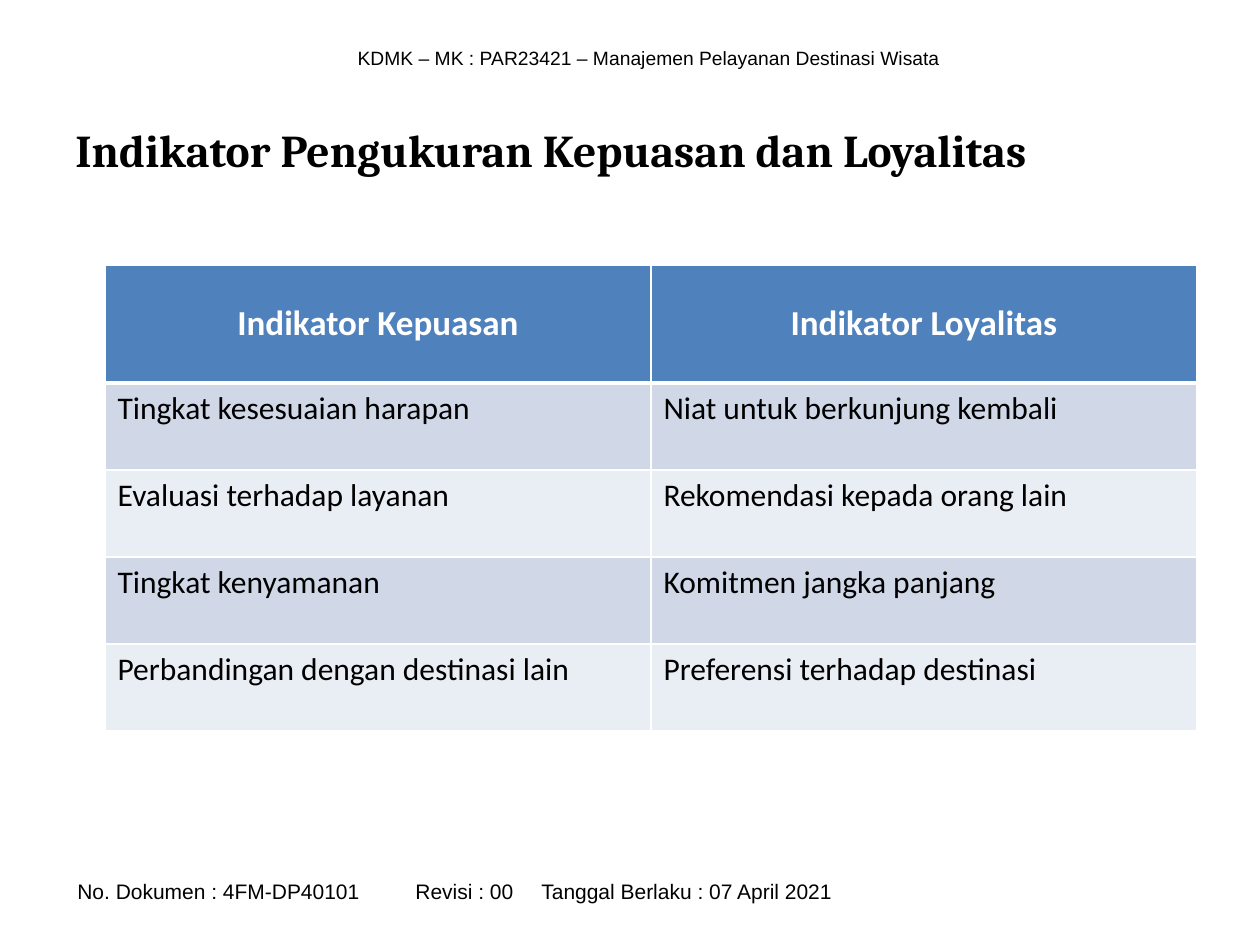
from lxml import etree
from pptx import Presentation
from pptx import util as u
from pptx.dml.color import RGBColor
from pptx.enum import text
from pptx.oxml.ns import qn

PX = 914400 // 126  # one px in EMU
BLACK, WHITE, BLUE = "000000", "FFFFFF", "4F81BD"
BANDS = ["D0D8E8", "E9EDF4"]
MIDDLE, TOP = text.MSO_ANCHOR.MIDDLE, text.MSO_ANCHOR.TOP
CENTER, LEFT = text.PP_ALIGN.CENTER, text.PP_ALIGN.LEFT


def rgb(value):
    return RGBColor.from_string(value)


def px(*values):
    return [u.Emu(v * PX) for v in values]


class Deck:
    def __init__(self, width, height):
        self.prs = Presentation()
        self.prs.slide_width, self.prs.slide_height = px(width, height)
        self.s = self.prs.slides.add_slide(self.prs.slide_layouts[6])

    def add_words(self, p, words, color=BLACK, align=LEFT, **style):
        p.alignment = align
        r = p.add_run()
        r.text = words
        for name, value in style.items():
            setattr(r.font, name, value)
        r.font.color.rgb = rgb(color)

    def textbox(self, box, words, anchor=TOP, indent=0, tabs=(), **style):
        tf = self.s.shapes.add_textbox(*px(*box)).text_frame
        tf.word_wrap = True
        tf.vertical_anchor = anchor
        p = tf.paragraphs[0]
        if tabs:
            pPr = p._p.get_or_add_pPr()
            pPr.set("marL", "0")
            pPr.set("indent", str(indent * PX))
            tab_list = etree.SubElement(pPr, qn("a:tabLst"))
            for pos in tabs:
                etree.SubElement(tab_list, qn("a:tab"), pos=str(pos * PX), algn="l")
        self.add_words(p, words, **style)

    def border(self, cell, **widths):
        tcPr = cell._tc.get_or_add_tcPr()
        for side in "LRTB":
            ln = etree.SubElement(tcPr, qn("a:ln" + side), w=str(u.Pt(widths.get(side, 1))))
            fill = etree.SubElement(ln, qn("a:solidFill"))
            etree.SubElement(fill, qn("a:srgbClr"), val=WHITE)

    def table(self, left, top, col_width, heights, rows):
        box = px(left, top, col_width * len(rows[0]), sum(heights))
        table = self.s.shapes.add_table(len(rows), len(rows[0]), *box).table
        for col in table.columns:
            col.width = u.Emu(col_width * PX)
        head = dict(size=u.Pt(20), bold=True, color=WHITE, align=CENTER)
        body = dict(size=u.Pt(18), bold=False)
        for i, (height, row) in enumerate(zip(heights, rows)):
            table.rows[i].height = u.Emu(height * PX)
            for j, words in enumerate(row):
                cell = table.cell(i, j)
                # A thick rule separates the header from the body
                self.border(cell, **{0: {"B": 3}, 1: {"T": 3}}.get(i, {}))
                cell.fill.solid()
                cell.fill.fore_color.rgb = rgb(BANDS[(i - 1) % 2] if i else BLUE)
                cell.vertical_anchor = TOP if i else MIDDLE
                p = cell.text_frame.paragraphs[0]
                self.add_words(p, words, name="Calibri", **(body if i else head))


def main():
    deck = Deck(1260, 945)

    # Running header and footer
    deck.textbox((123, 39, 1052, 37), "KDMK – MK : PAR23421 – Manajemen Pelayanan Destinasi Wisata",
                 anchor=MIDDLE, align=CENTER, name="Arial", size=u.Pt(11))
    deck.textbox((25, 872, 1191, 38),
                 "No. Dokumen : 4FM-DP40101\tRevisi : 00\tTanggal Berlaku : 07 April 2021",
                 anchor=MIDDLE, indent=40, tabs=(497, 811), name="Arial", size=u.Pt(12))

    # Title
    deck.textbox((63, 116, 1134, 728), "Indikator Pengukuran Kepuasan dan Loyalitas",
                 name="Cambria", size=u.Pt(26), bold=True)

    # Indicator table
    deck.table(105, 265, 546, [118] + [87] * 4, [
        ("Indikator Kepuasan", "Indikator Loyalitas"),
        ("Tingkat kesesuaian harapan", "Niat untuk berkunjung kembali"),
        ("Evaluasi terhadap layanan", "Rekomendasi kepada orang lain"),
        ("Tingkat kenyamanan", "Komitmen jangka panjang"),
        ("Perbandingan dengan destinasi lain", "Preferensi terhadap destinasi"),
    ])

    deck.prs.save("out.pptx")


if __name__ == "__main__":
    main()
